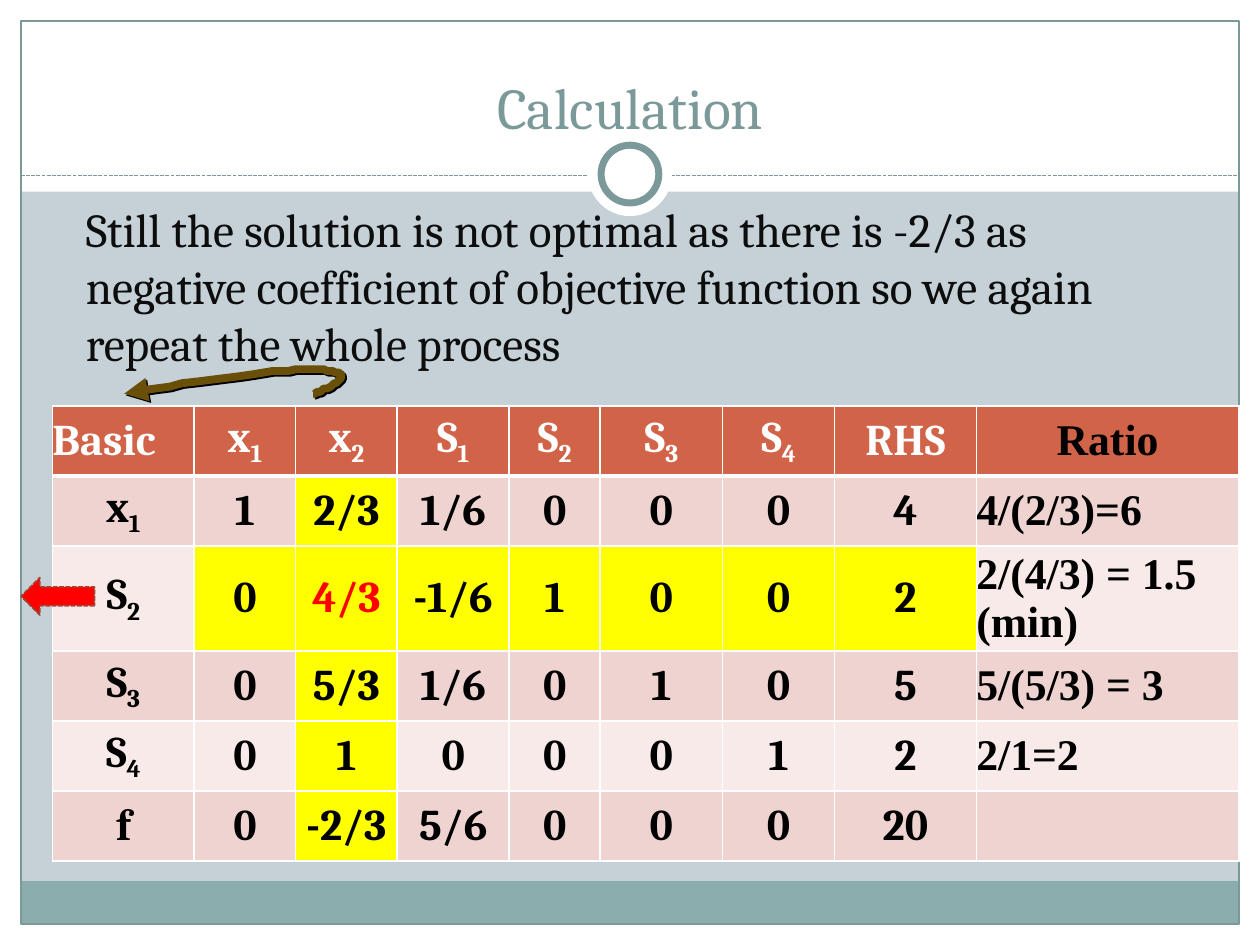
from lxml import etree
from pptx import Presentation
from pptx.dml.color import RGBColor
from pptx.enum.dml import MSO_LINE_DASH_STYLE as Dash
from pptx.enum.shapes import MSO_CONNECTOR as Connector, MSO_SHAPE as Shape
from pptx.enum.text import MSO_ANCHOR as Anchor, PP_ALIGN as Align
from pptx.oxml import parse_xml
from pptx.oxml.ns import nsdecls, qn
from pptx.util import Pt

WHITE = RGBColor(0xFF, 0xFF, 0xFF)
BLACK = RGBColor(0, 0, 0)
RED = RGBColor(0xFF, 0, 0)
YELLOW = RGBColor(0xFF, 0xFF, 0)
BACKGROUND = RGBColor(0xC5, 0xD1, 0xD7)
FOOTER = RGBColor(0x8C, 0xAD, 0xAE)
FRAME = RGBColor(0x7C, 0x99, 0x9A)
BODY = RGBColor(0x0D, 0x0D, 0x0D)
HEADER = RGBColor(0xD1, 0x63, 0x49)
BANDS = (RGBColor(0xF7, 0xEA, 0xE9), RGBColor(0xEE, 0xD3, 0xD0))
BROWN = RGBColor(0x69, 0x4F, 0x07)
ARROW_EDGE = RGBColor(0x9B, 0x49, 0x36)

SERIF, TIMES = "Cambria", "Times New Roman"
COLUMN_WIDTHS = (81, 58, 58, 64, 52, 70, 64, 81, 150)
ROW_HEIGHT = 40
PIVOT_ROW, PIVOT_COLUMN, RATIO_COLUMN = 2, 2, 8
TABLEAU = (
    ("Basic", "x_1", "x_2", "S_1", "S_2", "S_3", "S_4", "RHS", "Ratio"),
    ("x_1", "1", "2/3", "1/6", "0", "0", "0", "4", "4/(2/3)=6"),
    ("S_2", "0", "4/3", "-1/6", "1", "0", "0", "2", "2/(4/3) = 1.5 (min)"),
    ("S_3", "0", "5/3", "1/6", "0", "1", "0", "5", "5/(5/3) = 3"),
    ("S_4", "0", "1", "0", "0", "0", "1", "2", "2/1=2"),
    ("f", "0", "-2/3", "5/6", "0", "0", "0", "20", ""),
)
CURVE_START = (179.3, 225.4)
CURVE_SEGMENTS = (
    ((182.2, 223.9), (192.2, 219.6), (193.7, 217.4)),
    ((195.8, 215.3), (196.6, 213.1), (190.1, 212.4)),
    ((183.6, 211), (175.7, 210.2), (155.5, 212.4)),
    ((136.1, 213.8), (88.6, 221.8), (71.3, 224.6)),
)


def add_shape(slide, preset, box, fill=None, line=None, width=0.75):
    shape = slide.shapes.add_shape(preset, *map(Pt, box))
    shape.shadow.inherit = False
    if fill is None:
        shape.fill.background()
    else:
        shape.fill.solid()
        shape.fill.fore_color.rgb = fill
    if line is None:
        shape.line.fill.background()
    else:
        shape.line.color.rgb = line
        shape.line.width = Pt(width)
    return shape


def style_run(run, size, color, font=SERIF, bold=False):
    run.font.size = Pt(size)
    run.font.name = font
    run.font.color.rgb = color
    run.font.bold = bold


def add_text(slide, box, text, size, color, align=Align.LEFT, anchor=Anchor.TOP):
    frame = slide.shapes.add_textbox(*map(Pt, box)).text_frame
    frame.word_wrap = True
    frame.vertical_anchor = anchor
    frame.text = text
    paragraph = frame.paragraphs[0]
    paragraph.alignment = align
    style_run(paragraph.runs[0], size, color)


def add_dashed_rule(slide, left, right, top):
    rule = slide.shapes.add_connector(Connector.STRAIGHT, Pt(left), Pt(top), Pt(right), Pt(top))
    rule.line.color.rgb = FRAME
    rule.line.width = Pt(0.75)
    rule.line.dash_style = Dash.SQUARE_DOT
    etree.SubElement(rule._element.spPr, qn("a:effectLst"))


def add_frame(slide):
    for box in ((0, 528, 720, 12), (0, 0, 720, 109.5), (0, 0, 12, 540), (708, 0, 12, 540)):
        add_shape(slide, Shape.RECTANGLE, box, WHITE)
    add_shape(slide, Shape.RECTANGLE, (12, 503.5, 695.5, 24.5), FOOTER)
    add_shape(slide, Shape.RECTANGLE, (12, 12, 696, 516), line=FRAME)
    add_dashed_rule(slide, 12, 708, 100.5)
    add_shape(slide, Shape.OVAL, (336, 75.5, 48, 48), WHITE)
    add_shape(slide, Shape.OVAL, (343.5, 83, 33, 33), WHITE, FRAME, 4)


def bezier_points(start, segments, steps=12):
    points = []
    for segment in segments:
        controls = (start, *segment)
        for step in range(1, steps + 1):
            t = step / steps
            weights = ((1 - t) ** 3, 3 * t * (1 - t) ** 2, 3 * t * t * (1 - t), t ** 3)
            points.append(tuple(
                sum(weight * control[axis] for weight, control in zip(weights, controls))
                for axis in (0, 1)))
        start = segment[-1]
    return points


def add_curved_arrow(slide):
    scale = Pt(1)
    builder = slide.shapes.build_freeform(*CURVE_START, scale=scale)
    builder.add_line_segments(bezier_points(CURVE_START, CURVE_SEGMENTS), close=False)
    arrow = builder.convert_to_shape()
    arrow.fill.background()
    arrow.line.color.rgb = BROWN
    arrow.line.width = Pt(4.5)
    etree.SubElement(arrow.line._get_or_add_ln(), qn("a:tailEnd"), type="triangle")
    arrow._element.spPr.append(parse_xml(
        f'<a:effectLst {nsdecls("a")}><a:outerShdw blurRad="0" dist="{Pt(1.4)}" dir="2700000">'
        f'<a:srgbClr val="{BLACK}"/></a:outerShdw></a:effectLst>'))


def set_borders(cell, is_header):
    properties = cell._tc.get_or_add_tcPr()
    for side in ("lnL", "lnR", "lnT", "lnB"):
        width = 3 if is_header and side == "lnB" else 1
        properties.append(parse_xml(
            f'<a:{side} {nsdecls("a")} w="{Pt(width)}"><a:solidFill>'
            f'<a:srgbClr val="{WHITE}"/></a:solidFill></a:{side}>'))


def cell_fill(row, column):
    if row == 0:
        return HEADER
    in_pivot_row = row == PIVOT_ROW and 0 < column < RATIO_COLUMN
    return YELLOW if in_pivot_row or column == PIVOT_COLUMN else BANDS[row % 2]


def cell_color(row, column):
    if (row, column) == (PIVOT_ROW, PIVOT_COLUMN):
        return RED
    return WHITE if row == 0 and column != RATIO_COLUMN else BLACK


def fill_cell(cell, row, column, label):
    set_borders(cell, row == 0)
    cell.fill.solid()
    cell.fill.fore_color.rgb = cell_fill(row, column)
    cell.margin_left = cell.margin_right = cell.margin_top = cell.margin_bottom = 0
    cell.vertical_anchor = Anchor.MIDDLE
    base, _, subscript = label.partition("_")
    paragraph = cell.text_frame.paragraphs[0]
    paragraph.text = base
    is_left = (row, column) == (0, 0) or (row > 0 and column == RATIO_COLUMN)
    paragraph.alignment = Align.LEFT if is_left else Align.CENTER
    if subscript:
        run = paragraph.add_run()
        run.text = subscript
        run._r.get_or_add_rPr().set("baseline", "-25000")
    font = TIMES if column == RATIO_COLUMN else SERIF
    for run in paragraph.runs:
        style_run(run, 25, cell_color(row, column), font, True)


def add_tableau(slide):
    table = slide.shapes.add_table(
        len(TABLEAU), len(COLUMN_WIDTHS), Pt(30), Pt(232),
        Pt(sum(COLUMN_WIDTHS)), Pt(ROW_HEIGHT * len(TABLEAU))).table
    for column, width in zip(table.columns, COLUMN_WIDTHS):
        column.width = Pt(width)
    for row, labels in enumerate(TABLEAU):
        table.rows[row].height = Pt(ROW_HEIGHT)
        for column, label in enumerate(labels):
            fill_cell(table.cell(row, column), row, column, label)


def main():
    presentation = Presentation()
    presentation.slide_width, presentation.slide_height = Pt(720), Pt(540)
    slide = presentation.slides.add_slide(presentation.slide_layouts[6])
    slide.background.fill.solid()
    slide.background.fill.fore_color.rgb = BACKGROUND
    add_frame(slide)
    add_text(slide, (24, 24, 672, 60), "Calculation", 33, FRAME, Align.CENTER, Anchor.BOTTOM)
    add_curved_arrow(slide)
    add_tableau(slide)
    add_text(slide, (42, 111, 642, 105),
             "Still the solution is not optimal as there is -2/3 as negative coefficient "
             "of objective function so we again repeat the whole process", 27, BODY)
    row_arrow = add_shape(slide, Shape.RIGHT_ARROW, (12, 330, 42, 21.5), RED, ARROW_EDGE, 0.9)
    row_arrow.rotation = 180
    row_arrow.line.dash_style = Dash.SQUARE_DOT
    presentation.save("out.pptx")


if __name__ == "__main__":
    main()
